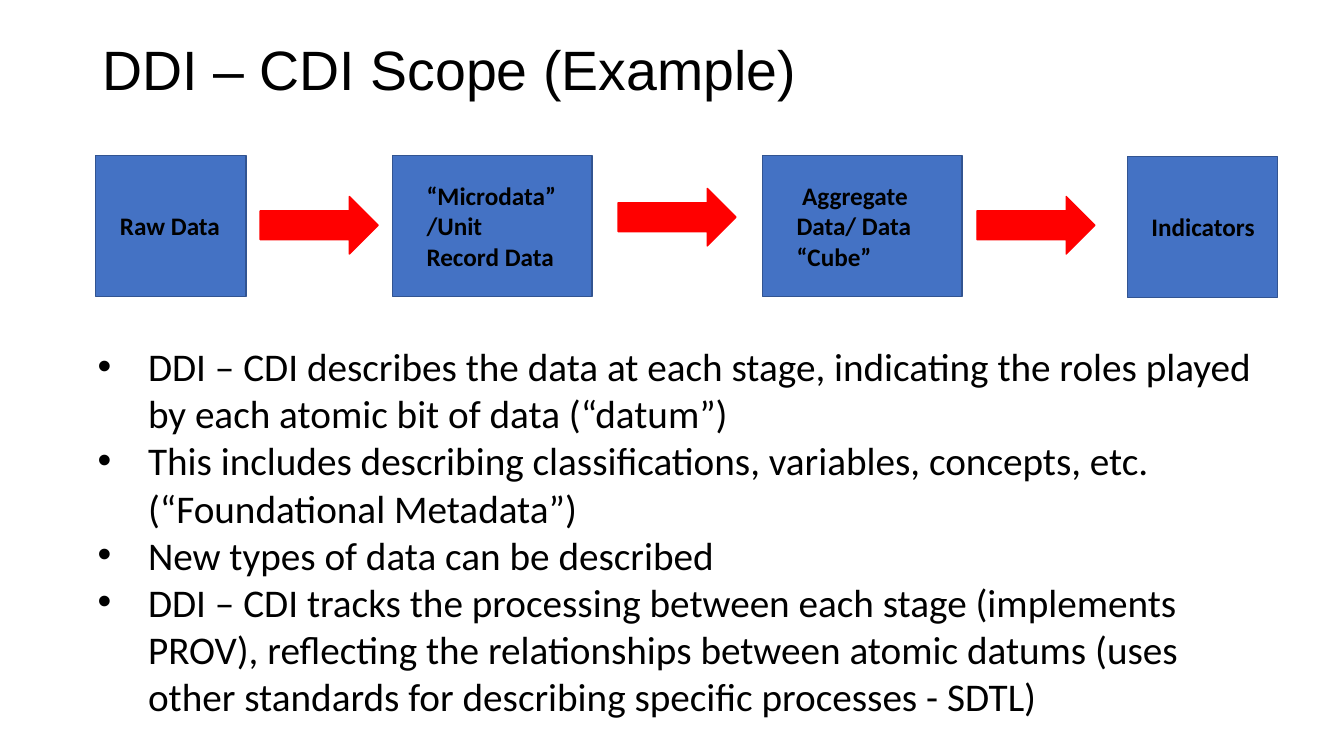
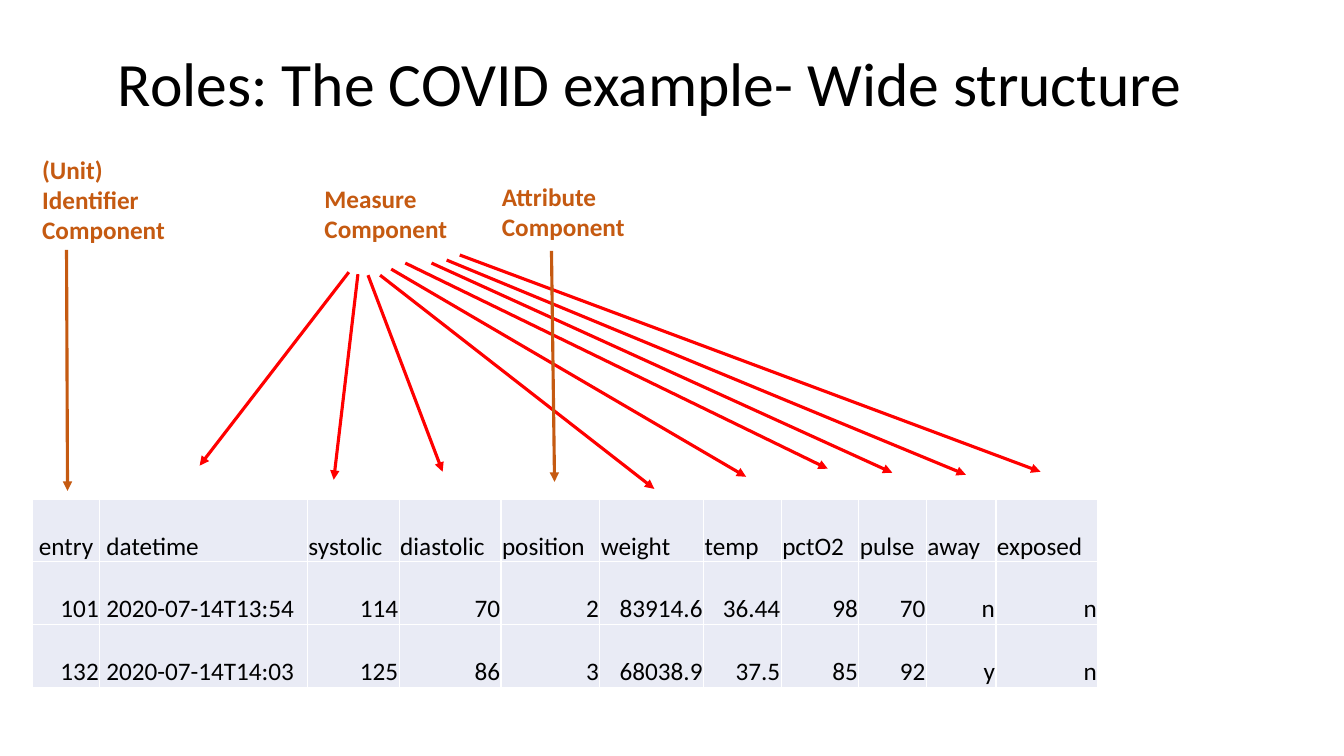
"""Build two slides on DDI – CDI: its scope, and variable roles in a wide table."""
from lxml import etree
from pptx import Presentation
from pptx.dml.color import RGBColor
from pptx.enum import shapes, text
from pptx.oxml import ns
from pptx.util import Inches, Pt

BLACK = RGBColor(0x00, 0x00, 0x00)
WHITE = RGBColor(0xFF, 0xFF, 0xFF)
RED = RGBColor(0xFF, 0x00, 0x00)
BLUE = RGBColor(0x44, 0x72, 0xC4)
NAVY = RGBColor(0x32, 0x54, 0x91)
ORANGE = RGBColor(0xC5, 0x5A, 0x11)
PALE = RGBColor(0xE9, 0xEB, 0xF5)


def write(frame, lines, size=18, color=BLACK, bold=False, font="Calibri", bullet=None):
    """Fill a text frame with left-aligned paragraphs in one style."""
    for index, line in enumerate(lines):
        para = frame.add_paragraph() if index else frame.paragraphs[0]
        para.text = line
        para.alignment = text.PP_ALIGN.LEFT
        if bullet:
            props = para._p.get_or_add_pPr()
            props.set("marL", str(Inches(0.5)))
            props.set("indent", str(Inches(-0.5)))
            etree.SubElement(props, ns.qn("a:buFont"), typeface="Arial")
            etree.SubElement(props, ns.qn("a:buChar"), char=bullet)
        para.font.size = Pt(size)
        para.font.name = font
        para.font.bold = bold
        para.font.color.rgb = color


def add_page(heading, left, top, height, size, font):
    """Add a title-only slide with its title placed and styled."""
    page = deck.slides.add_slide(deck.slide_layouts[5])
    title = page.shapes.title
    title.left, title.top = Inches(left), Inches(top)
    title.width, title.height = Inches(11.5), Inches(height)
    frame = title.text_frame
    frame.auto_size = text.MSO_AUTO_SIZE.NONE
    frame.vertical_anchor = text.MSO_ANCHOR.MIDDLE
    write(frame, [heading], size, font=font)
    frame.paragraphs[0].line_spacing = 0.9
    return page


deck = Presentation()
deck.slide_width, deck.slide_height = Inches(13.33), Inches(7.5)

page = add_page("DDI – CDI Scope (Example)", 0.92, 0.4, 0.64, 39.6, "Arial")

RECTANGLE = shapes.MSO_SHAPE.RECTANGLE
ARROW = shapes.MSO_SHAPE.RIGHT_ARROW
STAGES = [
    (RECTANGLE, 0.95, 1.54, 1.49, 1.4, "Raw Data", 0.24, 0.1),
    (ARROW, 2.58, 1.95, 1.17, 0.57, "", 0, 0),
    (RECTANGLE, 3.89, 1.54, 1.98, 1.4, "“Microdata”/Unit Record Data", 0.34, 0.34),
    (ARROW, 6.13, 1.87, 1.17, 0.57, "", 0, 0),
    (RECTANGLE, 7.56, 1.54, 1.98, 1.4, " Aggregate Data/ Data “Cube”", 0.34, 0.34),
    (ARROW, 9.69, 1.95, 1.17, 0.57, "", 0, 0),
    (RECTANGLE, 11.18, 1.55, 1.49, 1.4, "Indicators", 0.24, 0.1),
]
for kind, left, top, width, height, label, left_inset, right_inset in STAGES:
    stage = page.shapes.add_shape(kind, Inches(left), Inches(top), Inches(width), Inches(height))
    stage.shadow.inherit = False
    stage.fill.solid()
    stage.fill.fore_color.rgb = RED if kind == ARROW else BLUE
    stage.line.color.rgb = RED if kind == ARROW else NAVY
    stage.line.width = Pt(1)
    if label:
        frame = stage.text_frame
        frame.word_wrap = True
        frame.vertical_anchor = text.MSO_ANCHOR.MIDDLE
        frame.margin_left, frame.margin_right = Inches(left_inset), Inches(right_inset)
        write(frame, [label], bold=True)

box = page.shapes.add_textbox(Inches(0.87), Inches(3.35), Inches(11.68), Inches(3.87))
box.text_frame.word_wrap = True
write(box.text_frame, [
    "DDI – CDI describes the data at each stage, indicating the roles played by each atomic bit "
    "of data (“datum”)",
    "This includes describing classifications, variables, concepts, etc. (“Foundational Metadata”)",
    "New types of data can be described",
    "DDI – CDI tracks the processing between each stage (implements PROV), reflecting the "
    "relationships between atomic datums (uses other standards for describing specific "
    "processes - SDTL)",
], 28, bullet="•")

page = add_page("Roles: The COVID example- Wide structure", 1.07, 0.48, 0.75, 44, "Calibri")

ROLES = [
    (0.32, 1.48, 1.01, ["(Unit)", "Identifier", "Component"]),
    (3.12, 1.77, 0.71, ["Measure", "Component"]),
    (4.88, 1.75, 0.71, ["Attribute", "Component"]),
]
for left, top, height, lines in ROLES:
    box = page.shapes.add_textbox(Inches(left), Inches(top), Inches(1.43), Inches(height))
    box.text_frame.word_wrap = True
    write(box.text_frame, lines, color=ORANGE, bold=True)

POINTERS = [
    (ORANGE, 0.66, 2.48, 0.67, 4.87),
    (RED, 3.46, 2.7, 1.98, 4.62),
    (RED, 3.55, 2.72, 3.31, 4.76),
    (RED, 3.65, 2.73, 4.39, 4.68),
    (RED, 3.77, 2.73, 6.49, 4.85),
    (RED, 3.88, 2.67, 7.4, 4.73),
    (RED, 4.02, 2.61, 8.21, 4.65),
    (RED, 4.28, 2.61, 8.85, 4.69),
    (RED, 4.43, 2.58, 9.58, 4.71),
    (RED, 4.56, 2.53, 10.32, 4.68),
    (ORANGE, 5.47, 2.49, 5.5, 4.78),
]
for color, *ends in POINTERS:
    pointer = page.shapes.add_connector(shapes.MSO_CONNECTOR.STRAIGHT, *map(Inches, ends))
    pointer.line.color.rgb = color
    pointer.line.width = Pt(2.25)
    props = pointer._element.spPr
    etree.SubElement(props.find(ns.qn("a:ln")), ns.qn("a:tailEnd"), type="triangle")
    etree.SubElement(props, ns.qn("a:effectLst"))

COLUMN_WIDTHS = [0.67, 2.06, 0.91, 1.01, 0.98, 1.03, 0.77, 0.77, 0.67, 0.69, 1.01]
ROWS = [
    [" entry", " datetime", "systolic", "diastolic", "position", "weight", "temp", "pctO2",
     "pulse", "away", "exposed"],
    ["101", " 2020-07-14T13:54", "114", "70", "2", "83914.6", "36.44", "98", "70", "n", "n"],
    ["132", " 2020-07-14T14:03", "125", "86", "3", "68038.9", "37.5", "85", "92", "y", "n"],
]
table = page.shapes.add_table(len(ROWS), len(COLUMN_WIDTHS), Inches(0.32), Inches(4.95),
                              Inches(sum(COLUMN_WIDTHS)), Inches(1.87)).table
table.first_row = table.horz_banding = False
for column, width in zip(table.columns, COLUMN_WIDTHS):
    column.width = Inches(width)
for row_index, values in enumerate(ROWS):
    table.rows[row_index].height = Inches(1.87 / len(ROWS))
    for column_index, value in enumerate(values):
        cell = table.cell(row_index, column_index)
        cell.margin_left = cell.margin_right = cell.margin_top = Inches(0.01)
        cell.margin_bottom = 0
        cell.vertical_anchor = text.MSO_ANCHOR.BOTTOM
        write(cell.text_frame, [value])
        if row_index and column_index != 1:
            cell.text_frame.paragraphs[0].alignment = text.PP_ALIGN.RIGHT
        props = cell._tc.get_or_add_tcPr()
        for side in ("lnL", "lnR", "lnT", "lnB"):
            border = etree.SubElement(props, ns.qn(f"a:{side}"), w=str(Pt(1)))
            paint = etree.SubElement(border, ns.qn("a:solidFill"))
            etree.SubElement(paint, ns.qn("a:srgbClr"), val=str(WHITE))
        cell.fill.solid()
        cell.fill.fore_color.rgb = PALE

deck.save("out.pptx")
